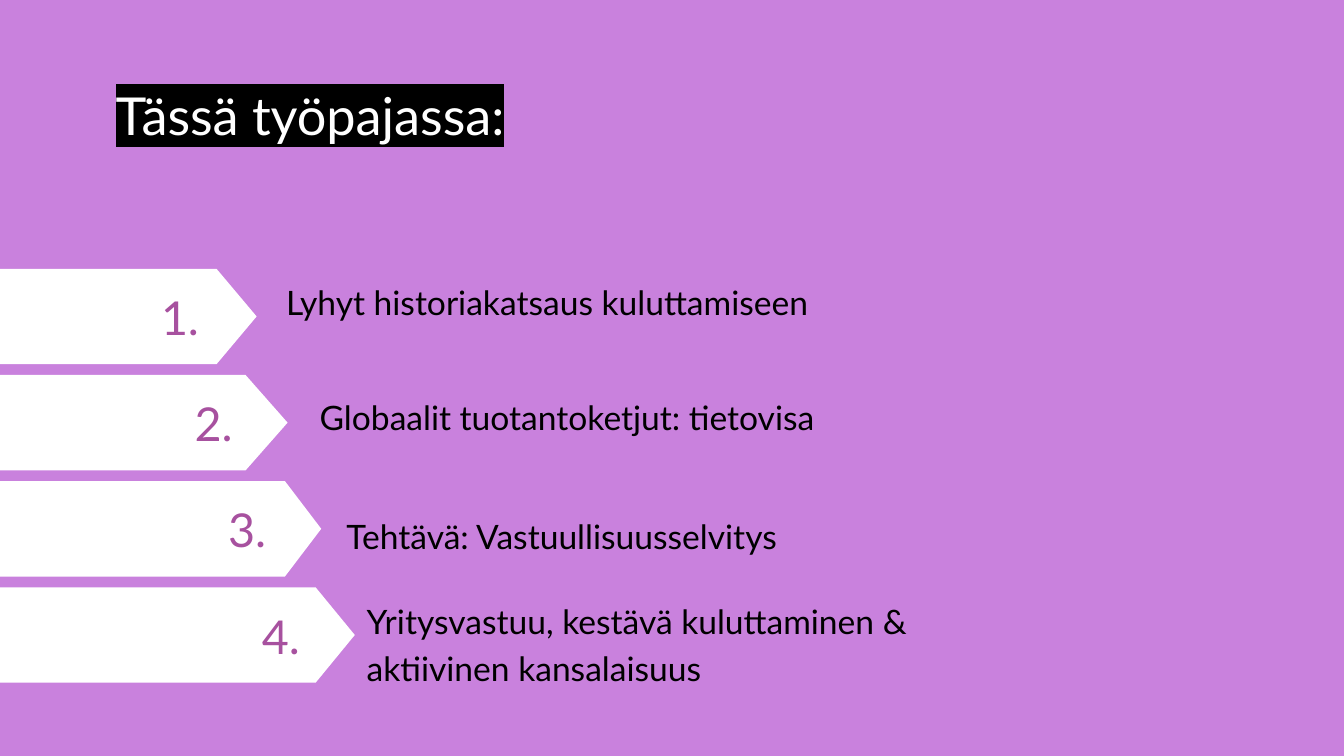
from lxml.etree import SubElement
from pptx import Presentation
from pptx.dml.color import RGBColor
from pptx.enum.shapes import MSO_SHAPE
from pptx.enum.text import MSO_ANCHOR, MSO_AUTO_SIZE, PP_ALIGN
from pptx.oxml.ns import qn
from pptx.util import Inches, Pt

COLORS = {
    "background": "C981DD",
    "tag": "FFFFFF",
    "number": "A7519F",
    "title": "FFFFFF",
    "marker": "000000",
    "topic": "000000",
}
FONT = "Lato"

# Grid of the agenda rows
FIRST_ROW, ROW_STEP, TAG_HEIGHT = 2, 0.79, 0.71
FIRST_NUMBER, NUMBER_STEP = 1.1, 0.25

# Topic, (left, top, width) of its text, (left, width, point) of its tag
AGENDA = [
    ("Lyhyt historiakatsaus kuluttamiseen", (2.03, 1.95, 4.75), (-0.02, 1.93, 0.42)),
    ("Globaalit tuotantoketjut: tietovisa", (2.28, 2.81, 4.47), (0, 2.14, 0.44)),
    ("Tehtävä: Vastuullisuusselvitys", (2.48, 3.69, 4.47), (0, 2.39, 0.38)),
    ("Yritysvastuu, kestävä kuluttaminen & aktiivinen kansalaisuus",
     (2.63, 4.33, 5.07), (0, 2.64, 0.41)),
]


def rgb(name):
    return RGBColor.from_string(COLORS[name])


def write(holder, text, *, size, color, spacing=1.0, after=0, highlight=None):
    frame = holder.text_frame
    frame.word_wrap = True
    frame.auto_size = MSO_AUTO_SIZE.NONE
    frame.vertical_anchor = MSO_ANCHOR.TOP
    frame.margin_left = frame.margin_right = Inches(0.1)
    frame.margin_top = frame.margin_bottom = Inches(0.1)

    paragraph = frame.paragraphs[0]
    paragraph.alignment = PP_ALIGN.LEFT
    paragraph.line_spacing = spacing
    paragraph.space_before = Pt(0)
    paragraph.space_after = Pt(after)

    run = paragraph.add_run()
    run.text = text
    run.font.name = FONT
    run.font.size = Pt(size)
    run.font.color.rgb = rgb(color)
    if highlight:
        properties = run.font._element
        marker = SubElement(properties, qn("a:highlight"))
        SubElement(marker, qn("a:srgbClr")).set("val", COLORS[highlight])
        properties.find(qn("a:solidFill")).addnext(marker)


def add_title(slide, text):
    title = slide.shapes.title
    title.left, title.top = Inches(0.76), Inches(0.45)
    title.width, title.height = Inches(6.35), Inches(0.93)
    write(title, text, size=28, color="title", spacing=1.15, after=12,
          highlight="marker")


def add_text(slide, text, left, top, width, height, **text_format):
    box = slide.shapes.add_textbox(*map(Inches, (left, top, width, height)))
    write(box, text, **text_format)


def add_tag(slide, left, top, width, point):
    tag = slide.shapes.add_shape(
        MSO_SHAPE.PENTAGON, *map(Inches, (left, top, width, TAG_HEIGHT)))
    tag.adjustments[0] = point
    tag.shadow.inherit = False
    tag.fill.solid()
    tag.fill.fore_color.rgb = rgb("tag")
    tag.line.fill.background()


def add_agenda_row(slide, index, topic, topic_place, tag_form):
    row_top = FIRST_ROW + index * ROW_STEP
    tag_left, tag_width, point = tag_form
    add_tag(slide, tag_left, row_top, tag_width, point)
    add_text(slide, f"{index + 1}.", FIRST_NUMBER + index * NUMBER_STEP,
             row_top + 0.05, 0.8, 0.6, size=25, color="number")
    add_text(slide, topic, *topic_place, 0.49, size=18, color="topic",
             spacing=1.15, after=10)


def main():
    # Widescreen, 16:9
    presentation = Presentation()
    presentation.slide_width = Inches(10)
    presentation.slide_height = Inches(10) * 9 // 16

    # Title-only slide on a plain background
    slide = presentation.slides.add_slide(presentation.slide_layouts[5])
    slide.background.fill.solid()
    slide.background.fill.fore_color.rgb = rgb("background")
    add_title(slide, "Tässä työpajassa:")

    # Numbered agenda
    for index, (topic, topic_place, tag_form) in enumerate(AGENDA):
        add_agenda_row(slide, index, topic, topic_place, tag_form)

    presentation.save("out.pptx")


if __name__ == "__main__":
    main()
